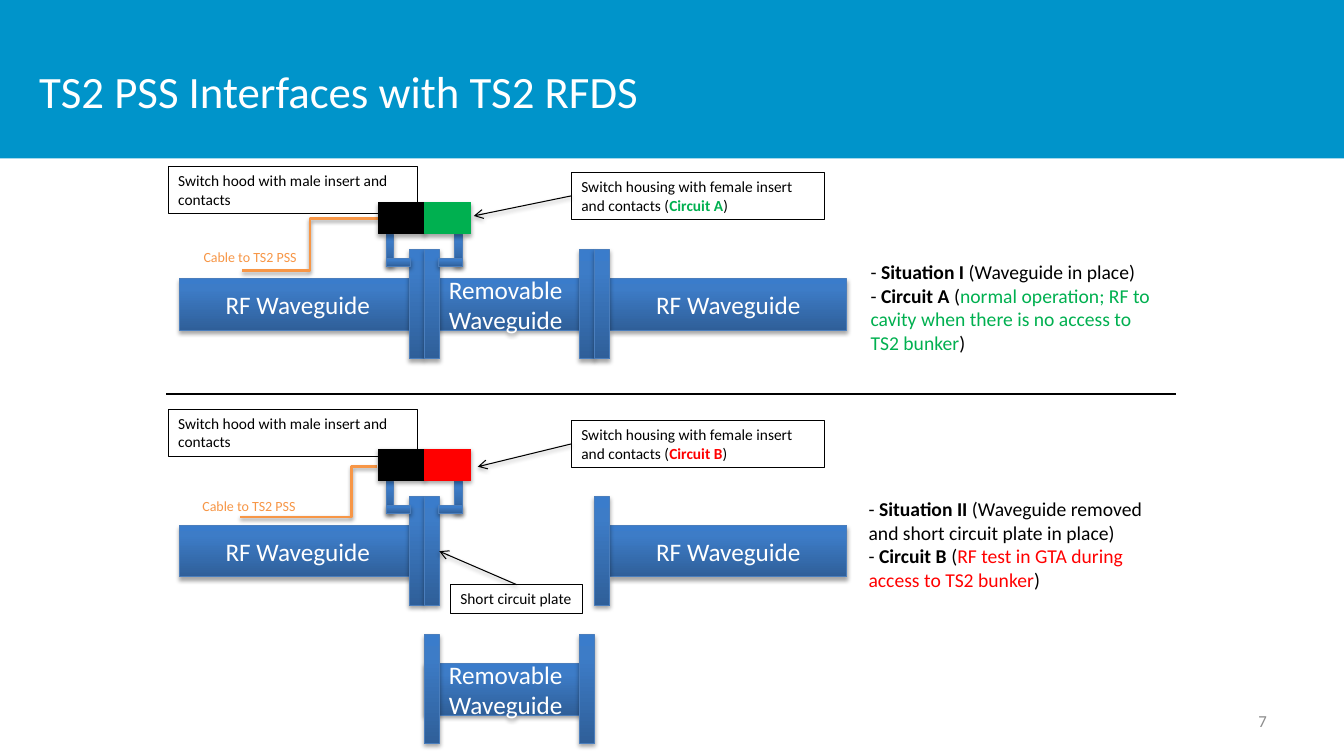
from copy import deepcopy

from pptx import Presentation
from pptx import util as u
from pptx.dml.color import RGBColor
from pptx.enum import shapes, text
from pptx.oxml import parse_xml
from pptx.oxml.ns import nsdecls, qn

THEME = {
    "font": "Calibri", "banner": "0094CA", "white": "FFFFFF", "black": "000000",
    "page": "8C8C8C", "cable": "F79646", "green": "00B050", "red": "FF0000",
    "steel_edge": "4B7EBC",
    "steel": [(0, "2F5F99"), (0.8, "3D7CC7"), (1, "3A7CCB")],
    "title_pt": 32, "pipe_pt": 18, "note_pt": 14, "page_pt": 12, "label_pt": 11, "cable_pt": 10,
}

TITLE = "TS2 PSS Interfaces with TS2 RFDS"
PAGE = "7"
HOOD = "Switch hood with male insert and contacts"
HOUSING = "Switch housing with female insert and contacts ("
CABLE = "Cable to TS2 PSS"
PLATE = "Short circuit plate"

LEFT_PIPE = ("RF Waveguide", 4.52, 5.97)
REMOVABLE = ("Removable Waveguide", 10.69, 4.11)
RIGHT_PIPE = ("RF Waveguide", 15.37, 5.97)

WAVEGUIDES = [
    (6.3, [LEFT_PIPE, REMOVABLE, RIGHT_PIPE], [10.31, 14.61, 10.69, 14.99]),
    (12.52, [LEFT_PIPE, RIGHT_PIPE], [10.31, 14.99, 10.69]),
    (16, [REMOVABLE], [14.61, 10.69]),
]

SITUATIONS = [
    {"flange_top": 6.3, "circuit": "Circuit A", "colour": "green",
     "hood_top": 4.19, "housing_top": 4.34, "arrow_tip": (11.94, 5.44),
     "cable": (9.53, 5.51, 6.1, 6.81), "bend": 0.5, "cable_label": (4.88, 6.15),
     "note_at": (21.69, 6.43, 7.82, 2.64),
     "note": [[("- ",), ("Situation I", "black", True), (" (Waveguide in place)",)],
              [("- ",), ("Circuit A", "black", True), (" (",),
               ("normal operation; RF to cavity when there is no access to TS2 bunker", "green"),
               (")",)]]},
    {"flange_top": 12.52, "circuit": "Circuit B", "colour": "red",
     "hood_top": 10.31, "housing_top": 10.59, "arrow_tip": (12.04, 11.76),
     "cable": (9.5, 11.76, 6.05, 13.03), "bend": 0.185, "cable_label": (4.85, 12.4),
     "note_at": (21.64, 12.4, 7.87, 2.64),
     "note": [[("- ",), ("Situation II", "black", True), (" (Waveguide removed",)],
              [("and short circuit plate in place)",)],
              [("- ",), ("Circuit B", "black", True), (" (",),
               ("RF test in GTA during access to TS2 bunker", "red"), (")",)]]},
]

FLANGE_W, FLANGE_H = 0.38, 2.74
PIPE_H = 1.3
BRACKET = 0.2
SWITCH_X, SWITCH_W, SWITCH_H = 9.53, 1.17, 0.79


def rgb(name):
    return RGBColor.from_string(THEME.get(name, name))


def cm(values):
    return [u.Cm(v) for v in values]


def cast_shadow(shape, distance, opacity):
    properties = shape.element.spPr
    for old in properties.findall(qn("a:effectLst")):
        properties.remove(old)
    properties.append(parse_xml(
        f'<a:effectLst {nsdecls("a")}><a:outerShdw blurRad="{u.Pt(3.1)}" dist="{u.Pt(distance)}" '
        f'dir="5400000" rotWithShape="0"><a:srgbClr val="000000"><a:alpha val="{opacity}000"/>'
        '</a:srgbClr></a:outerShdw></a:effectLst>'))


def write(shape, paragraphs, size, colour="black", align=None, anchor=text.MSO_ANCHOR.TOP):
    frame = shape.text_frame
    frame.word_wrap = True
    frame.vertical_anchor = anchor
    for index, runs in enumerate(paragraphs):
        paragraph = frame.add_paragraph() if index else frame.paragraphs[0]
        paragraph.alignment = align
        paragraph.font.name = THEME["font"]
        paragraph.font.size = u.Pt(THEME[size])
        paragraph.font.color.rgb = rgb(colour)
        for words, tint, bold in ((*run, colour, False)[:3] if len(run) < 2
                                  else (*run, False)[:3] for run in runs):
            run = paragraph.add_run()
            run.text = words
            run.font.name = THEME["font"]
            run.font.size = u.Pt(THEME[size])
            run.font.color.rgb = rgb(tint)
            run.font.bold = bold


def text_box(at, paragraphs, size, colour="black", outline=None, grow=True, **layout):
    box = slide.shapes.add_textbox(*cm(at))
    write(box, paragraphs, size, colour, **layout)
    if grow:
        box.text_frame.auto_size = text.MSO_AUTO_SIZE.SHAPE_TO_FIT_TEXT
    if outline:
        box.line.color.rgb = rgb("black")
        box.line.width = u.Pt(outline)
    return box


def block(at, colour):
    part = slide.shapes.add_shape(shapes.MSO_SHAPE.RECTANGLE, *cm(at))
    part.shadow.inherit = False
    part.line.width = u.Pt(0.75)
    if colour == "steel":
        part.fill.gradient()
        part.fill.gradient_angle = 90
        stops = part.element.spPr.find(".//" + qn("a:gsLst"))
        stops.append(deepcopy(stops[-1]))
        for stop, (position, tint) in zip(part.fill.gradient_stops, THEME["steel"]):
            stop.position = position
            stop.color.rgb = rgb(tint)
        part.line.color.rgb = rgb("steel_edge")
    else:
        part.fill.solid()
        part.fill.fore_color.rgb = rgb(colour)
        part.line.color.rgb = rgb(colour)
    cast_shadow(part, 1.8, 35)
    return part


def connect(ends, colour="black", width=0.75, kind=shapes.MSO_CONNECTOR.STRAIGHT,
            arrow=False, shadow=True):
    link = slide.shapes.add_connector(kind, *cm(ends))
    link.line.color.rgb = rgb(colour)
    link.line.width = u.Pt(width)
    if arrow:
        link.line._get_or_add_ln().append(parse_xml(f'<a:tailEnd {nsdecls("a")} type="arrow"/>'))
    if shadow:
        cast_shadow(link, 1.6, 38)
    else:
        link.element.spPr.append(parse_xml(f'<a:effectLst {nsdecls("a")}/>'))
    return link


def draw_waveguide(top, pipes, flanges):
    for words, left, width in pipes:
        pipe = block((left, top + 0.72, width, PIPE_H), "steel")
        write(pipe, [[(words,)]], "pipe_pt", "white", text.PP_ALIGN.CENTER, text.MSO_ANCHOR.MIDDLE)
    return [block((left, top, FLANGE_W, FLANGE_H), "steel") for left in flanges]


def draw_situation(s):
    top = s["flange_top"]
    for post, arm in ((9.73, 9.73), (11.46, 11.05)):
        block((post, top - 0.38, BRACKET, 0.79), "steel")
        block((arm, top + 0.22, 0.61, BRACKET), "steel")
    text_box((4.24, s["hood_top"], 6.27, 1.19), [[(HOOD,)]], "label_pt", outline=0.5)
    housing = text_box((14.4, s["housing_top"], 6.38, 1.19),
                       [[(HOUSING,), (s["circuit"], s["colour"], True), (")",)]],
                       "label_pt", outline=0.5)
    pointer = connect((14.4, s["housing_top"] + 0.6, *s["arrow_tip"]), arrow=True)
    pointer.begin_connect(housing, 1)
    cable = connect(s["cable"], "cable", 2, shapes.MSO_CONNECTOR.ELBOW)
    guides = cable.element.spPr.find(qn("a:prstGeom")).find(qn("a:avLst"))
    guides.append(parse_xml(
        f'<a:gd {nsdecls("a")} name="adj1" fmla="val {round(s["bend"] * 100000)}"/>'))
    text_box((*s["cable_label"], 3.91, 0.69), [[(CABLE,)]], "cable_pt", "cable")
    for column, colour in enumerate(("black", s["colour"])):
        block((SWITCH_X + column * SWITCH_W, top - 1.2, SWITCH_W, SWITCH_H), colour)
    text_box(s["note_at"], s["note"], "note_pt")


deck = Presentation()
deck.slide_width, deck.slide_height = cm((33.87, 19.05))
slide = deck.slides.add_slide(deck.slide_layouts[6])

banner = slide.shapes.add_shape(shapes.MSO_SHAPE.RECTANGLE, *cm((0, 0, 33.87, 3.99)))
banner.shadow.inherit = False
banner.fill.solid()
banner.fill.fore_color.rgb = rgb("banner")
banner.line.fill.background()
text_box((0.74, 0.69, 26.44, 3.18), [[(TITLE,)]], "title_pt", "white", grow=False,
         anchor=text.MSO_ANCHOR.MIDDLE)
text_box((24.28, 17.65, 7.9, 1.02), [[(PAGE,)]], "page_pt", "page", grow=False,
         align=text.PP_ALIGN.RIGHT, anchor=text.MSO_ANCHOR.MIDDLE)

flange_rows = [draw_waveguide(*row) for row in WAVEGUIDES]
for situation in SITUATIONS:
    draw_situation(situation)

plate_label = text_box((11.35, 14.73, 3.33, 0.74), [[(PLATE,)]], "label_pt", outline=0.75)
plate_pointer = connect((13, 14.73, 11.07, 13.89), arrow=True)
plate_pointer.begin_connect(plate_label, 0)
plate_pointer.end_connect(flange_rows[1][-1], 3)
connect((4.19, 9.93, 29.64, 9.93), width=1.5, shadow=False)

deck.save("out.pptx")
